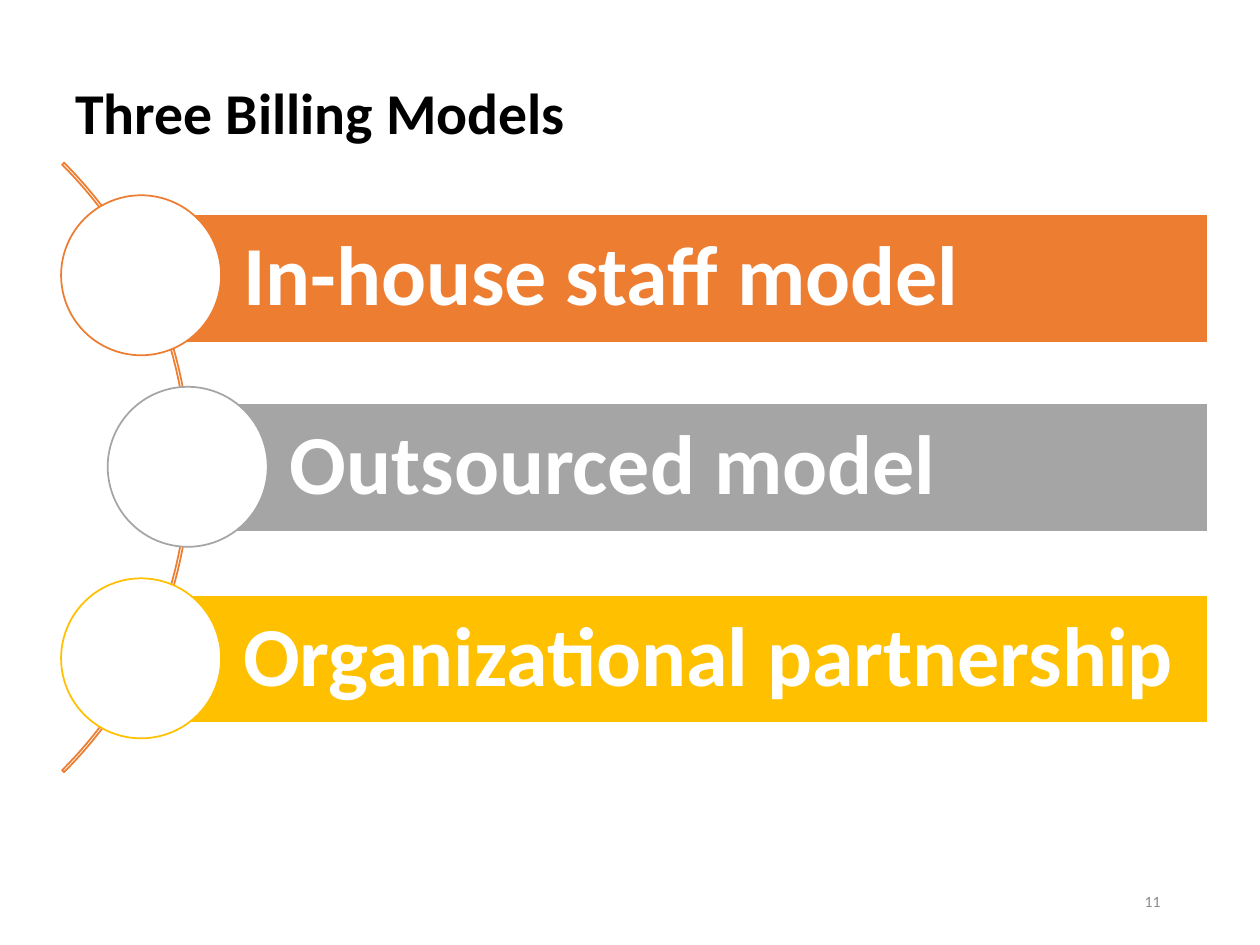
from dataclasses import dataclass

from pptx import Presentation
from pptx.dml.color import RGBColor
from pptx.enum.shapes import MSO_SHAPE as SHAPE
from pptx.enum.text import MSO_ANCHOR as ANCHOR, PP_ALIGN as ALIGN
from pptx.util import Inches, Pt


@dataclass(frozen=True)
class Theme:
    font: str = "Calibri"
    black: str = "000000"
    white: str = "FFFFFF"
    muted: str = "8C8C8C"
    orange: str = "ED7D31"
    gray: str = "A5A5A5"
    gold: str = "FFC000"
    title: int = 33
    label: int = 48
    number: int = 9
    line: int = 1


class Deck:
    """Draws styled elements on the current slide."""

    def __init__(self, slide, theme):
        self.s = slide
        self.theme = theme

    def set_text(self, sp, text, size, color, bold=False, align=ALIGN.LEFT, spacing=1.0):
        tf = sp.text_frame
        tf.word_wrap = True
        tf.vertical_anchor = ANCHOR.MIDDLE
        p = tf.paragraphs[0]
        p.text = text
        p.alignment = align
        p.line_spacing = spacing
        p.font.name = self.theme.font
        p.font.size = Pt(size)
        p.font.bold = bold
        p.font.color.rgb = RGBColor.from_string(color)
        return tf

    def text(self, box, text, size, color, **style):
        sp = self.s.shapes.add_textbox(*map(Inches, box))
        self.set_text(sp, text, size, color, **style)

    def shape(self, kind, box, fill, line):
        sp = self.s.shapes.add_shape(kind, *map(Inches, box))
        sp.shadow.inherit = False
        if fill:
            sp.fill.solid()
            sp.fill.fore_color.rgb = RGBColor.from_string(fill)
        else:
            sp.fill.background()
        sp.line.color.rgb = RGBColor.from_string(line)
        sp.line.width = Pt(self.theme.line)
        return sp

    def arc(self, box, color):
        sp = self.shape(SHAPE.BLOCK_ARC, box, None, color)
        for i, value in enumerate((189, 27, 0.0032)):
            sp.adjustments[i] = value

    def bar(self, left, top, text, color):
        right, height = 9.59, 1.02
        sp = self.shape(SHAPE.RECTANGLE, (left, top, right - left, height), color, self.theme.white)
        tf = self.set_text(sp, text, self.theme.label, self.theme.white, bold=True, spacing=0.9)
        tf.margin_left = Inches(0.81)
        tf.margin_top = tf.margin_right = tf.margin_bottom = Inches(0.13)

    def circle(self, center, top, color):
        size = 1.27
        self.shape(SHAPE.OVAL, (center - size / 2, top, size, size), self.theme.white, color)


def main():
    theme = Theme()
    prs = Presentation()
    prs.slide_width, prs.slide_height = Inches(10), Inches(7.5)
    deck = Deck(prs.slides.add_slide(prs.slide_layouts[6]), theme)

    deck.text((0.5, 0.42, 8.92, 1), "Three Billing Models", theme.title, theme.black,
              bold=True, spacing=0.9)
    deck.text((7.06, 6.95, 2.25, 0.4), "11", theme.number, theme.muted, align=ALIGN.RIGHT)

    deck.arc((-5.33, 0.29, 6.84, 6.84), theme.orange)
    models = (
        ("In-house staff model", theme.orange, 1.12, 1.7),
        ("Outsourced model", theme.gray, 1.49, 3.2),
        ("Organizational partnership", theme.gold, 1.12, 4.72),
    )
    for i, (name, color, left, top) in enumerate(models):
        deck.bar(left, top, name, color)
        deck.circle(left, 1.55 + 1.52 * i, color)

    prs.save("out.pptx")


if __name__ == "__main__":
    main()
